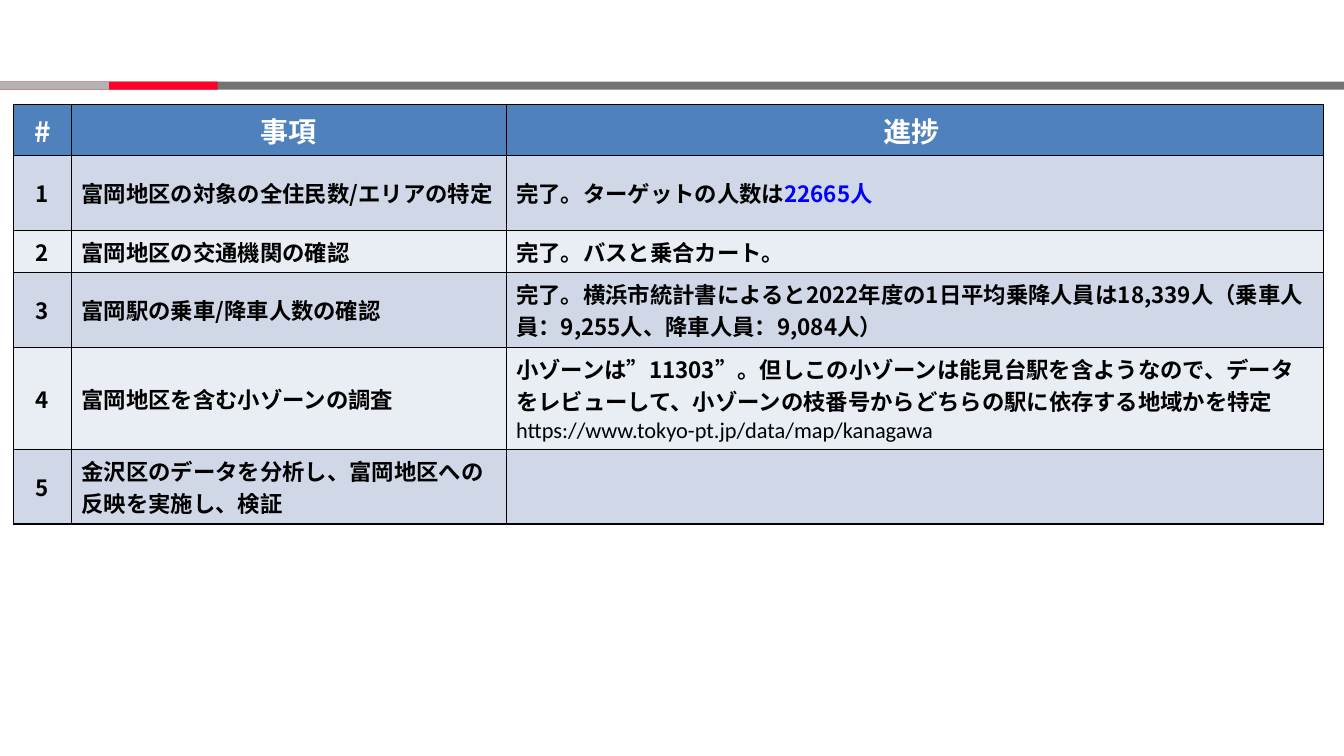
from dataclasses import dataclass

from lxml.etree import SubElement
from pptx import Presentation
from pptx.dml.color import RGBColor
from pptx.enum.shapes import MSO_SHAPE
from pptx.enum.text import MSO_ANCHOR, PP_ALIGN
from pptx.oxml.ns import qn
from pptx.util import Inches, Pt

JAPANESE_FONT = "Noto Sans CJK JP"
BLACK = "000000"
WHITE = "FFFFFF"
HEADER_FILL = "4F81BD"
BAND_FILLS = ("D0D8E8", "E9EDF4")
COLUMN_WIDTHS = (0.58, 4.31, 8.11)


@dataclass(frozen=True)
class Bar:
    width: float
    color: str


@dataclass(frozen=True)
class Span:
    text: str
    color: str = BLACK
    font: str = JAPANESE_FONT
    size: int = 16
    bold: bool = True


@dataclass(frozen=True)
class Task:
    height: float
    subject: str
    progress: tuple[Span, ...] = ()


BARS = (Bar(13.33, "737373"), Bar(2.16, "FF0026"), Bar(1.08, "B3B3B3"))
HEADER_HEIGHT = 0.5
HEADINGS = ("#", "事項", "進捗 ")
TASKS = (
    Task(0.74, "富岡地区の対象の全住民数/エリアの特定",
         (Span("完了。ターゲットの人数は"), Span("22665人", "0000FF"))),
    Task(0.42, "富岡地区の交通機関の確認",
         (Span("完了。バスと乗合カート。"),)),
    Task(0.74, "富岡駅の乗車/降車人数の確認",
         (Span("完了。横浜市統計書によると2022年度の1日平均乗降人員は18,339人"
               "（乗車人員：9,255人、降車人員：9,084人）"),)),
    Task(1.01, "富岡地区を含む小ゾーンの調査",
         (Span("小ゾーンは”11303”。但しこの小ゾーンは能見台駅を含ようなので、データを"
               "レビューして、小ゾーンの枝番号からどちらの駅に依存する地域かを特定\v"),
          Span("https://www.tokyo-pt.jp/data/map/kanagawa", font="Calibri", bold=False))),
    Task(0.74, "金沢区のデータを分析し、富岡地区への反映を実施し、検証"),
)


def rgb(color: str) -> RGBColor:
    return RGBColor.from_string(color)


def draw_bar(page, bar: Bar) -> None:
    shape = page.shapes.add_shape(
        MSO_SHAPE.RECTANGLE, Inches(0), Inches(0.81), Inches(bar.width), Inches(0.08))
    shape.shadow.inherit = False
    shape.fill.solid()
    shape.fill.fore_color.rgb = rgb(bar.color)
    shape.line.fill.background()


def format_run(run, span: Span) -> None:
    font = run.font
    font.name = span.font
    font.size = Pt(span.size)
    font.bold = span.bold
    font.color.rgb = rgb(span.color)
    SubElement(font._element, qn("a:ea"), typeface=span.font)


def draw_borders(cell) -> None:
    properties = cell._tc.get_or_add_tcPr()
    for side in ("lnL", "lnR", "lnT", "lnB"):
        line = SubElement(properties, qn(f"a:{side}"), w=str(Pt(1)))
        fill = SubElement(line, qn("a:solidFill"))
        SubElement(fill, qn("a:srgbClr"), val=BLACK)


def fill_cell(cell, spans: tuple[Span, ...], color: str, centered: bool) -> None:
    draw_borders(cell)
    cell.fill.solid()
    cell.fill.fore_color.rgb = rgb(color)
    cell.vertical_anchor = MSO_ANCHOR.MIDDLE
    para = cell.text_frame.paragraphs[0]
    para.alignment = PP_ALIGN.CENTER if centered else PP_ALIGN.LEFT
    for index, span in enumerate(spans):
        if index == 0:
            para.text = span.text
        else:
            para.add_run().text = span.text
        format_run(para.runs[-1], span)


def draw_table(page) -> None:
    heights = (HEADER_HEIGHT, *(task.height for task in TASKS))
    frame = page.shapes.add_table(
        len(heights), len(COLUMN_WIDTHS), Inches(0.13), Inches(1.04),
        Inches(sum(COLUMN_WIDTHS)), Inches(sum(heights)))
    table = frame.table
    for column, width in zip(table.columns, COLUMN_WIDTHS):
        column.width = Inches(width)
    for row, height in zip(table.rows, heights):
        row.height = Inches(height)
    for cell, heading in zip(table.rows[0].cells, HEADINGS):
        fill_cell(cell, (Span(heading, WHITE, size=20),), HEADER_FILL, True)
    for number, task in enumerate(TASKS, start=1):
        color = BAND_FILLS[(number - 1) % 2]
        contents = ((Span(str(number)),), (Span(task.subject),), task.progress)
        for column, spans in enumerate(contents):
            fill_cell(table.cell(number, column), spans, color, column == 0)


def main() -> None:
    deck = Presentation()
    deck.slide_width = Inches(13.33)
    deck.slide_height = Inches(7.5)
    page = deck.slides.add_slide(deck.slide_layouts[6])
    for bar in BARS:
        draw_bar(page, bar)
    draw_table(page)
    deck.save("out.pptx")


if __name__ == "__main__":
    main()
